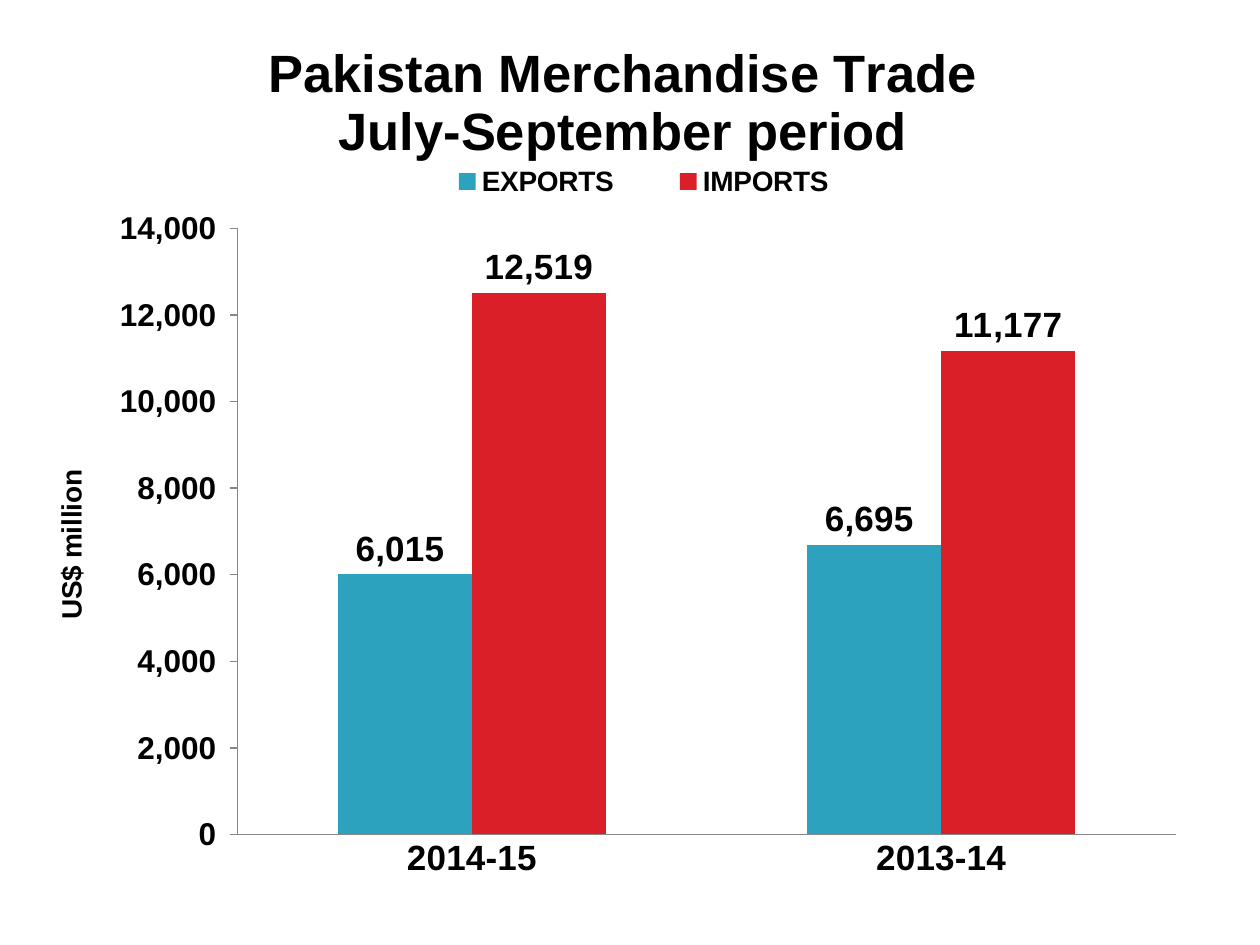
from lxml.etree import SubElement
from pptx import Presentation
from pptx.chart.data import CategoryChartData
from pptx.dml.color import RGBColor
from pptx.enum.chart import XL_CHART_TYPE, XL_LABEL_POSITION, XL_LEGEND_POSITION, XL_TICK_MARK
from pptx.oxml.ns import qn
from pptx.util import Inches, Pt

TITLE = ["Pakistan Merchandise Trade", "July-September period"]
AXIS_TITLE = "US$ million"
YEARS = ["2014-15", "2013-14"]
RED_NEGATIVE = r"#,##0_);[Red]\(#,##0\)"
ACCOUNTING = r'_-* #,##0_-;\-* #,##0_-;_-* "-"??_-;_-@_'
SERIES = [
    ("EXPORTS", (6015, 6695), "2DA2BF", RED_NEGATIVE),
    ("IMPORTS ", (12519, 11177), "DA1F28", ACCOUNTING),
]
PLOT_BOX = (0.186, 0.237, 0.764, 0.669)
LEGEND_BOX = (0.32, 0.16, 0.4, 0.05)


def color(value):
    return RGBColor.from_string(value)


def style(font, size):
    font.name = "Arial"
    font.size = Pt(size)
    font.bold = True
    font.color.rgb = color("000000")


def write_title(title, lines, size):
    tf = title.text_frame
    for i, line in enumerate(lines):
        p = tf.paragraphs[0] if i == 0 else tf.add_paragraph()
        r = p.add_run()
        r.text = line
        style(r.font, size)


def set_layout(parent, box, inner=False):
    layout = parent.find(qn("c:layout"))
    if layout is None:
        layout = SubElement(parent, qn("c:layout"))
        anchor = parent.find(qn("c:legendPos"))
        if anchor is None:
            parent.insert(0, layout)
        else:
            anchor.addnext(layout)
    manual = SubElement(layout, qn("c:manualLayout"))
    parts = [("layoutTarget", "inner")] if inner else []
    parts += [("xMode", "edge"), ("yMode", "edge")]
    parts += zip("xywh", box)
    for name, value in parts:
        SubElement(manual, qn(f"c:{name}")).set("val", str(value))


prs = Presentation()
prs.slide_width, prs.slide_height = Inches(10), Inches(7.5)
s = prs.slides.add_slide(prs.slide_layouts[6])

data = CategoryChartData()
data.categories = YEARS
for name, values, _, _ in SERIES:
    data.add_series(name, values)
chart = s.shapes.add_chart(
    XL_CHART_TYPE.COLUMN_CLUSTERED,
    Inches(0.07), Inches(0.11), Inches(9.75), Inches(7.19), data,
).chart
chart.font.name = "Arial"
chart.font.size = Pt(10)
chart.font.color.rgb = color("000000")

chart.has_title = True
write_title(chart.chart_title, TITLE, 30)
chart.chart_title.include_in_layout = False

chart.has_legend = True
chart.legend.position = XL_LEGEND_POSITION.RIGHT
chart.legend.include_in_layout = False
style(chart.legend.font, 16)

plot = chart.plots[0]
plot.gap_width = 150
plot.overlap = 0
plot.vary_by_categories = False
for series, (_, _, fill, number_format) in zip(plot.series, SERIES):
    series.format.fill.solid()
    series.format.fill.fore_color.rgb = color(fill)
    labels = series.data_labels
    labels.show_value = True
    labels.position = XL_LABEL_POSITION.OUTSIDE_END
    labels.number_format = number_format
    labels.number_format_is_linked = False
    style(labels.font, 20)

years, amounts = chart.category_axis, chart.value_axis
for axis, size, tick in ((years, 20, XL_TICK_MARK.NONE), (amounts, 18, XL_TICK_MARK.OUTSIDE)):
    axis.has_major_gridlines = False
    axis.major_tick_mark = tick
    axis.minor_tick_mark = XL_TICK_MARK.NONE
    axis.format.line.color.rgb = color("868686")
    style(axis.tick_labels.font, size)
amounts.minimum_scale, amounts.maximum_scale, amounts.major_unit = 0, 14000, 2000
amounts.tick_labels.number_format = RED_NEGATIVE
amounts.tick_labels.number_format_is_linked = False
amounts.has_title = True
write_title(amounts.axis_title, [AXIS_TITLE], 16)

plot_area = chart.element.find(".//" + qn("c:plotArea"))
set_layout(plot_area, PLOT_BOX, inner=True)
set_layout(chart.element.find(".//" + qn("c:legend")), LEGEND_BOX)

prs.save("out.pptx")
